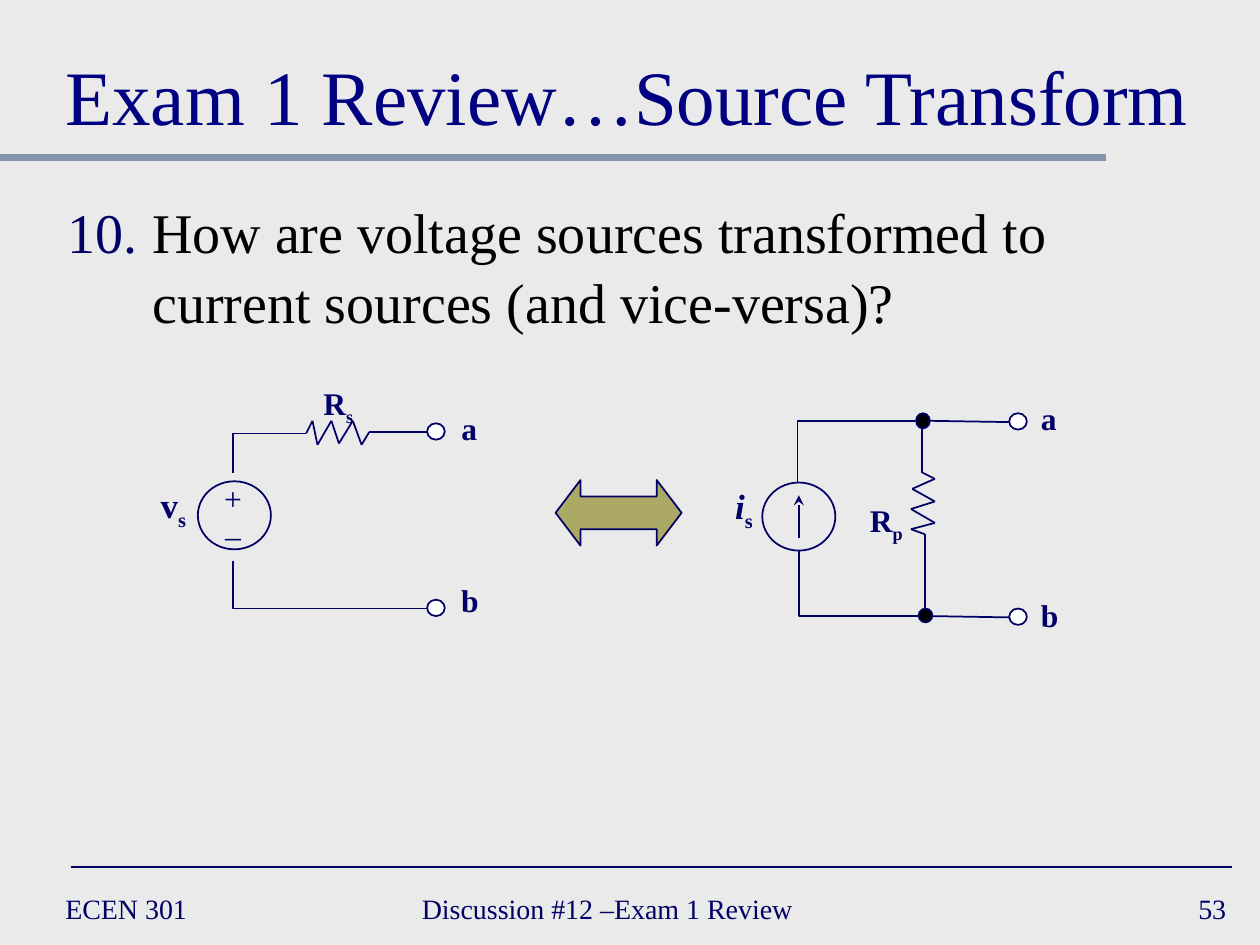
from itertools import pairwise

from lxml.etree import SubElement
from pptx import Presentation
from pptx.dml.color import RGBColor
from pptx.enum.shapes import MSO_CONNECTOR as Link, MSO_SHAPE as Shape
from pptx.enum.text import MSO_ANCHOR as Anchor, PP_ALIGN as Align
from pptx.oxml.ns import qn
from pptx.util import Inches, Pt

COLORS = {name: RGBColor.from_string(value) for name, value in {
    "page": "EAEAEA", "navy": "000066", "title": "000080", "rule": "8495A9",
    "black": "000000", "white": "FFFFFF", "olive": "ACA964"}.items()}
FONT = "Times New Roman"


def add_line(shapes, start, end, color="navy", width=1):
    line = shapes.add_connector(Link.STRAIGHT, *map(Inches, start + end))
    line.line.color.rgb = COLORS[color]
    line.line.width = Pt(width)
    SubElement(line._element.spPr, qn("a:effectLst"))
    return line


def write(para, parts, size, color="navy", **formats):
    """Fill a paragraph with (text, extra formats) parts."""
    for text, extra in parts:
        span = para.add_run()
        span.text = text
        values = {"name": FONT, "size": Pt(size), **formats, **extra}
        baseline = values.pop("baseline", None)
        for key, value in values.items():
            setattr(span.font, key, value)
        span.font.color.rgb = COLORS[color]
        if baseline:
            span._r.get_or_add_rPr().set("baseline", str(baseline))


deck = Presentation()
deck.slide_width, deck.slide_height = Inches(10), Inches(7.5)
page = deck.slides.add_slide(deck.slide_layouts[5])
page.background.fill.solid()
page.background.fill.fore_color.rgb = COLORS["page"]

# Rules under the title and above the footer
add_line(page.shapes, (0, 1.25), (8.78, 1.25), "rule", 4)
add_line(page.shapes, (0.56, 6.88), (9.78, 6.88))

# Footer
for left, width, text, align in [
        (0.42, 2.17, "ECEN 301", Align.LEFT),
        (3.25, 3.83, "Discussion #12 –Exam 1 Review", Align.LEFT),
        (7.75, 2.08, "53", Align.RIGHT)]:
    box = page.shapes.add_textbox(*map(Inches, (left, 7, width, 0.42)))
    box.text_frame.word_wrap = True
    box.text_frame.vertical_anchor = Anchor.MIDDLE
    para = box.text_frame.paragraphs[0]
    para.alignment = align
    write(para, [(text, {})], 16)

# Title
title = page.shapes.title
for key, value in {"left": 0.42, "top": 0.17, "width": 9.17, "height": 1}.items():
    setattr(title, key, Inches(value))
title.text_frame.vertical_anchor = Anchor.BOTTOM
title.text_frame.word_wrap = True
para = title.text_frame.paragraphs[0]
para.alignment = Align.LEFT
write(para, [("Exam 1 Review…Source Transform", {})], 44, "title")

# Numbered question
box = page.shapes.add_textbox(*map(Inches, (0.44, 1.46, 9.14, 1.54)))
box.text_frame.word_wrap = True
box.text_frame.margin_top = Inches(0.08)
para = box.text_frame.paragraphs[0]
para.line_spacing = 1.05
props = para._p.get_or_add_pPr()
props.set("marL", str(Inches(0.67)))
props.set("indent", str(Inches(-0.67)))
bullet_color = SubElement(props, qn("a:buClr"))
SubElement(bullet_color, qn("a:srgbClr"), val=str(COLORS["navy"]))
SubElement(props, qn("a:buFont"), typeface=FONT)
SubElement(props, qn("a:buAutoNum"), type="arabicPeriod", startAt="10")
write(para, [("How are voltage sources transformed to current sources "
              "(and vice-versa)?", {})], 32, "black")

# The two circuits: ellipses (left, top, width, height, fill), bent wires,
# chains of straight wires, and labels (left, top, width, height, size, text, subscript)
circuits = [
    {"ellipses": [(1.57, 3.82, 0.58, 0.54, None),
                  (3.39, 4.76, 0.14, 0.13, "white"),
                  (3.39, 3.36, 0.14, 0.13, "white")],
     "bends": [[(1.85, 4.45), (1.85, 4.83), (3.39, 4.83)],
               [(1.85, 3.75), (1.85, 3.44), (2.43, 3.44)]],
     "chains": [[(2.43, 3.44), (2.48, 3.34), (2.52, 3.53), (2.63, 3.34),
                 (2.69, 3.52), (2.8, 3.34), (2.87, 3.53), (2.93, 3.43),
                 (3.39, 3.43)]],
     "labels": [(1.17, 3.79, 0.41, 0.43, 20, "v", "s"),
                (2.46, 3, 0.45, 0.4, 18, "R", "s"),
                (3.56, 3.2, 0.33, 0.4, 18, "a", ""),
                (3.56, 4.56, 0.34, 0.4, 18, "b", "")]},
    {"ellipses": [(6.05, 3.83, 0.58, 0.54, None),
                  (8.01, 4.83, 0.14, 0.13, "white"),
                  (8.01, 3.28, 0.14, 0.13, "white"),
                  (7.29, 4.83, 0.11, 0.11, "black"),
                  (7.27, 3.28, 0.11, 0.12, "black")],
     "bends": [[(6.34, 4.37), (6.34, 4.89), (7.29, 4.89)],
               [(6.33, 3.83), (6.33, 3.34), (7.26, 3.34)]],
     "chains": [[(7.32, 3.4), (7.32, 3.75), (7.42, 3.8), (7.24, 3.88),
                 (7.42, 3.98), (7.23, 4.04), (7.42, 4.15), (7.23, 4.2),
                 (7.34, 4.24), (7.34, 4.83)],
                [(7.4, 4.89), (8.01, 4.9)],
                [(7.38, 3.34), (8.01, 3.35)]],
     "labels": [(5.73, 3.8, 0.35, 0.43, 20, "i", "s"),
                (6.8, 3.93, 0.47, 0.4, 18, "R", "p"),
                (8.16, 3.12, 0.33, 0.4, 18, "a", ""),
                (8.16, 4.68, 0.34, 0.4, 18, "b", "")]}]

groups = []
for circuit in circuits:
    group = page.shapes.add_group_shape()
    groups.append(group)
    for *place, fill in circuit["ellipses"]:
        ellipse = group.shapes.add_shape(Shape.OVAL, *map(Inches, place))
        ellipse.shadow.inherit = False
        ellipse.line.color.rgb = COLORS["navy"]
        ellipse.line.width = Pt(1)
        if fill:
            ellipse.fill.solid()
            ellipse.fill.fore_color.rgb = COLORS[fill]
        else:
            ellipse.fill.background()
    for bend in circuit["bends"]:
        corners = [tuple(map(Inches, point)) for point in bend]
        builder = group.shapes.build_freeform(*corners[0])
        builder.add_line_segments(corners[1:], close=False)
        wire = builder.convert_to_shape()
        wire.shadow.inherit = False
        wire.fill.background()
        wire.line.color.rgb = COLORS["navy"]
        wire.line.width = Pt(1)
    for chain in circuit["chains"]:
        for start, end in pairwise(chain):
            add_line(group.shapes, start, end)
    for *place, size, text, subscript in circuit["labels"]:
        label = group.shapes.add_textbox(*map(Inches, place))
        label.text_frame.word_wrap = False
        para = label.text_frame.paragraphs[0]
        para.alignment = Align.CENTER
        parts = [(text, {"italic": text == "i"})]
        if subscript:
            parts.append((subscript, {"baseline": -25000}))
        write(para, parts, size, bold=True)

# Polarity signs of the voltage source
signs = groups[0].shapes.add_textbox(*map(Inches, (1.68, 3.75, 0.34, 0.7)))
signs.text_frame.word_wrap = False
for para, sign in [(signs.text_frame.paragraphs[0], "+"),
                   (signs.text_frame.add_paragraph(), "–")]:
    para.alignment = Align.CENTER
    write(para, [(sign, {})], 18)

# Direction arrow of the current source
arrow = add_line(groups[1].shapes, (6.34, 4.27), (6.34, 3.93))
SubElement(arrow.line._get_or_add_ln(), qn("a:tailEnd"), type="stealth")

# Equivalence arrow between the circuits
swap = page.shapes.add_shape(Shape.LEFT_RIGHT_ARROW,
                             *map(Inches, (4.41, 3.81, 1, 0.52)))
swap.adjustments[0], swap.adjustments[1] = 0.5, 0.38
swap.shadow.inherit = False
swap.fill.solid()
swap.fill.fore_color.rgb = COLORS["olive"]
swap.line.color.rgb = COLORS["navy"]
swap.line.width = Pt(1)

deck.save("out.pptx")
